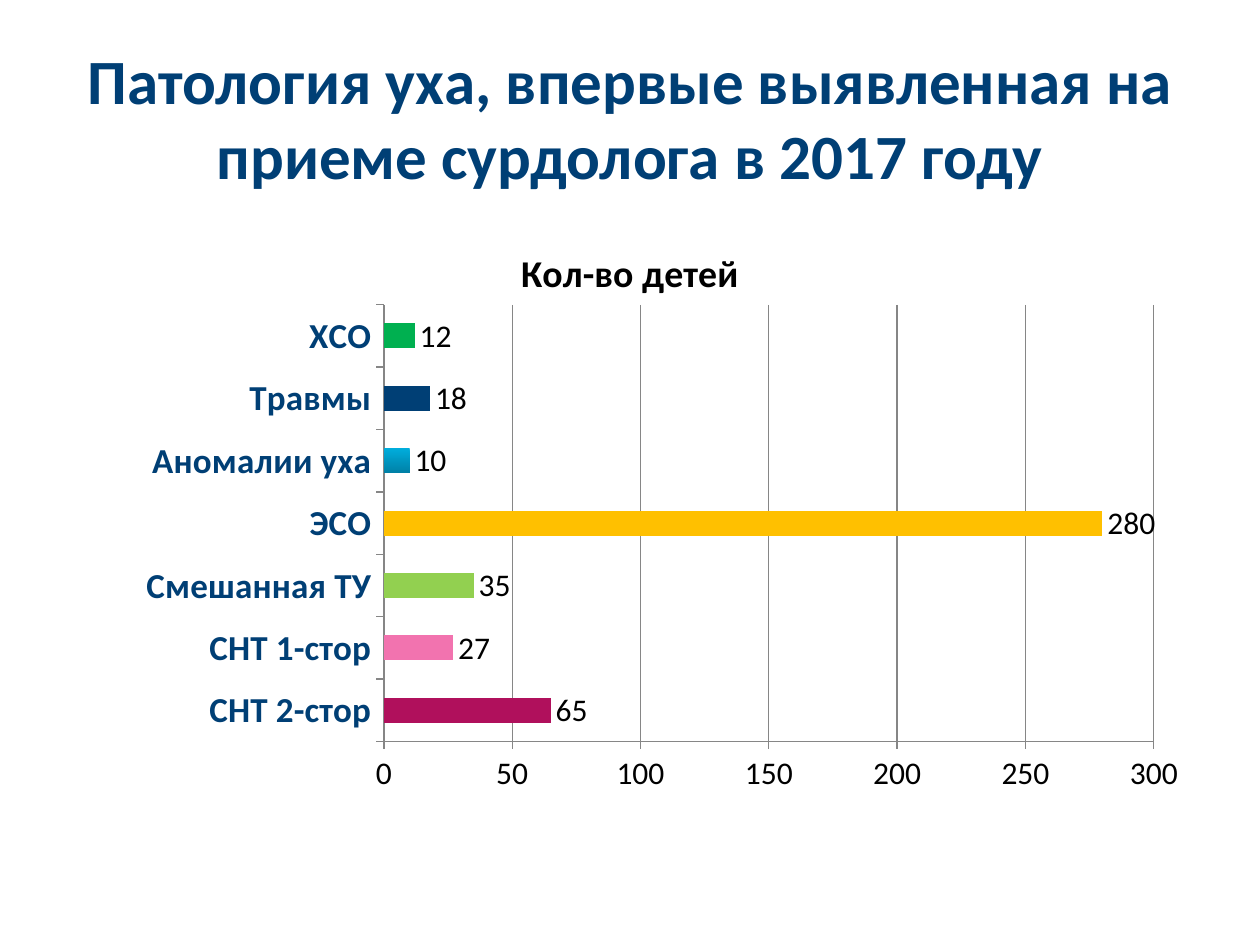
from lxml import etree
from pptx import Presentation
from pptx import util as u
from pptx.chart.data import CategoryChartData
from pptx.dml.color import RGBColor
from pptx.enum import chart as ch, text as tx
from pptx.oxml import ns

SCALE = 914400 / 126  # EMU in one px
HUES = {"navy": "003F75", "black": "000000", "grey": "868686", "wine": "B0105C",
        "pink": "F273AF", "lime": "92D050", "gold": "FFC000", "sky": "00ADDC",
        "teal": "0080A6", "green": "00B050"}
# Category, count, fill: two hues make a gradient
ROWS = [("СНТ 2-стор", 65, ["wine"]), ("СНТ 1-стор", 27, ["pink"]),
        ("Смешанная ТУ", 35, ["lime"]), ("ЭСО", 280, ["gold"]),
        ("Аномалии уха", 10, ["sky", "teal"]), ("Травмы", 18, ["navy"]),
        ("ХСО", 12, ["green"])]
PLOT = {"x": 0.283, "y": 0.136, "w": 0.679, "h": 0.7}


def px(n):
    return u.Emu(round(n * SCALE))


def hue(name):
    return RGBColor.from_string(HUES[name])


def put(obj, **vals):
    for key, val in vals.items():
        setattr(obj, key, val)


class Deck:
    face = "Calibri"

    def __init__(self, wide, high):
        self.prs = Presentation()
        put(self.prs, slide_width=px(wide), slide_height=px(high))
        self.slide = self.prs.slides.add_slide(self.prs.slide_layouts[5])

    def font(self, font, size, tone="black", bold=False):
        put(font, name=self.face, size=u.Pt(size), bold=bold)
        font.color.rgb = hue(tone)

    def title(self, words, x, y, w, h):
        box = self.slide.shapes.title
        put(box, left=px(x), top=px(y), width=px(w), height=px(h))
        put(box.text_frame, text=words, word_wrap=True,
            vertical_anchor=tx.MSO_ANCHOR.MIDDLE)
        para = box.text_frame.paragraphs[0]
        para.alignment = tx.PP_ALIGN.CENTER
        self.font(para.runs[0].font, 36, "navy", True)

    def bars(self, head, rows, x, y, w, h):
        data = CategoryChartData()
        data.categories = [row[0] for row in rows]
        data.add_series(head, [row[1] for row in rows])
        chart = self.slide.shapes.add_chart(
            ch.XL_CHART_TYPE.BAR_CLUSTERED, px(x), px(y), px(w), px(h), data).chart
        chart.has_legend = False
        self.font(chart.font, 18)

        # Heading
        chart.has_title = True
        frame = chart.chart_title.text_frame
        frame.text = head
        self.font(frame.paragraphs[0].runs[0].font, 21.6, bold=True)

        # Axes
        put(chart.value_axis, minimum_scale=0, maximum_scale=300, major_unit=50,
            has_major_gridlines=True)
        for axis in (chart.category_axis, chart.value_axis):
            put(axis, major_tick_mark=ch.XL_TICK_MARK.OUTSIDE,
                minor_tick_mark=ch.XL_TICK_MARK.NONE)
            self.line(axis.format.line)
        self.line(chart.value_axis.major_gridlines.format.line)
        self.font(chart.category_axis.tick_labels.font, 20, "navy", True)

        # Bars and values
        plot = chart.plots[0]
        put(plot, gap_width=150, vary_by_categories=False, has_data_labels=True)
        put(plot.data_labels, show_value=True,
            position=ch.XL_LABEL_POSITION.OUTSIDE_END)
        self.font(plot.data_labels.font, 18)
        for i, row in enumerate(rows):
            self.fill(plot.series[0].points[i].format.fill, row[2])
        self.place(chart)

    def line(self, line):
        line.color.rgb = hue("grey")
        line.width = u.Pt(0.75)

    def fill(self, fill, tones):
        if len(tones) == 1:
            fill.solid()
            fill.fore_color.rgb = hue(tones[0])
            return
        fill.gradient()
        fill.gradient_angle = 270
        for stop, tone in zip(fill.gradient_stops, tones):
            stop.color.rgb = hue(tone)

    def place(self, chart):
        """Fix the inner plot area as shares of the chart."""
        area = chart._chartSpace.chart.plotArea
        for old in area.findall(ns.qn("c:layout")):
            area.remove(old)
        outer = etree.Element(ns.qn("c:layout"))
        inner = etree.SubElement(outer, ns.qn("c:manualLayout"))
        vals = {"layoutTarget": "inner", "xMode": "edge", "yMode": "edge", **PLOT}
        for key, val in vals.items():
            etree.SubElement(inner, ns.qn("c:" + key)).set("val", str(val))
        area.insert(0, outer)


deck = Deck(1260, 945)
deck.title("Патология уха, впервые выявленная на приеме сурдолога в 2017 году",
           63, 38, 1134, 158)
deck.bars("Кол-во детей", ROWS, 63, 220, 1134, 624)
deck.prs.save("out.pptx")
